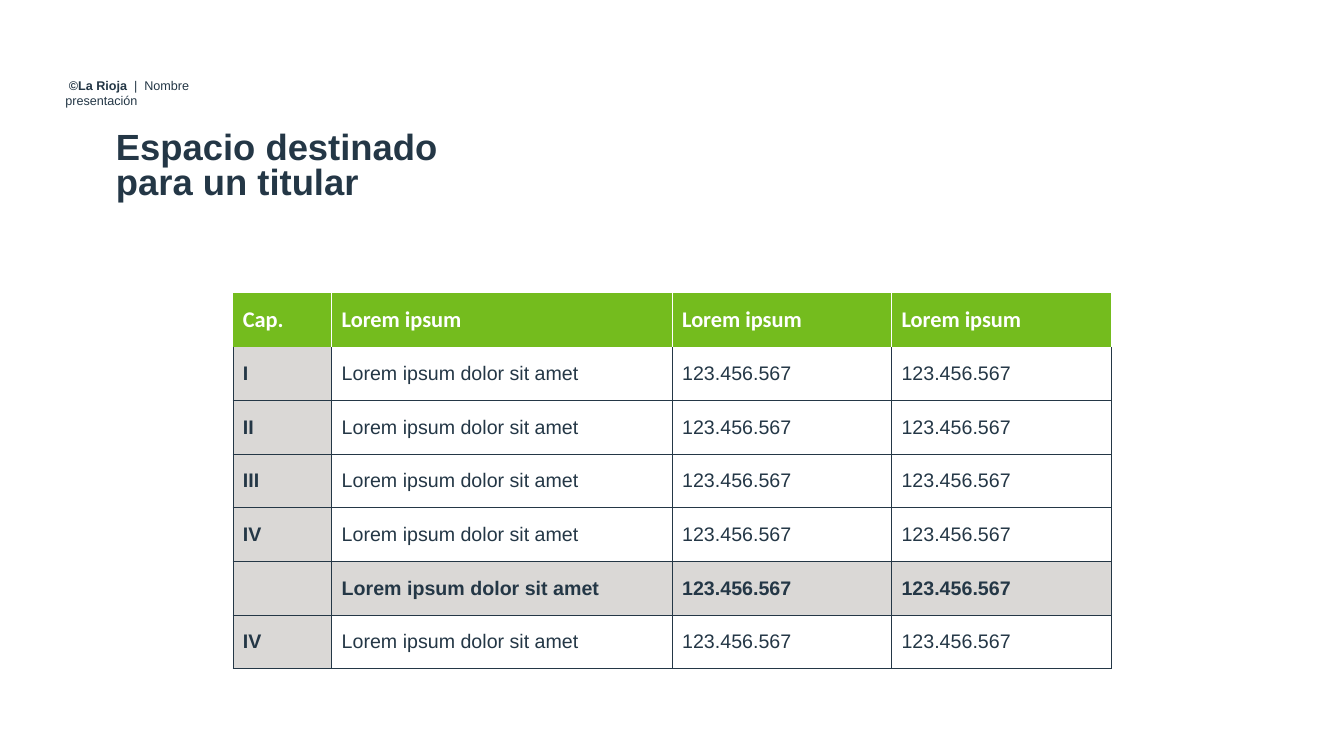
from lxml.etree import SubElement
from pptx import Presentation
from pptx.dml.color import RGBColor
from pptx.enum.text import MSO_ANCHOR, MSO_AUTO_SIZE, PP_ALIGN
from pptx.oxml.ns import qn
from pptx.util import Pt

COLORS = {"navy": "243746", "green": "74BC1E", "grey": "DAD8D6", "white": "FFFFFF"}
AMOUNT = "123.456.567"
ITEM = "Lorem ipsum dolor sit amet"
HEADINGS = ["Cap."] + ["Lorem ipsum"] * 3
CHAPTERS = ["I", "II", "III", "IV", "", "IV"]
TOTAL_ROW = 5
COLUMN_WIDTHS = [70.6, 243.2, 156.7, 156.7]
ROW_HEIGHT = 38.35


def rgb(name):
    return RGBColor.from_string(COLORS[name])


def style_run(r, size, bold=False, color="navy", name="Arial"):
    r.font.size = Pt(size)
    r.font.bold = bold
    r.font.name = name
    r.font.color.rgb = rgb(color)


def add_header(slide):
    box = slide.shapes.add_textbox(Pt(39.6), Pt(51.8), Pt(146.9), Pt(18))
    tf = box.text_frame
    tf.word_wrap = True
    p = tf.paragraphs[0]
    for text, bold in ((" ©La Rioja", True), ("  |  Nombre presentación", False)):
        r = p.add_run()
        r.text = text
        style_run(r, 9, bold)


def set_title(slide, text):
    title = slide.shapes.title
    title.left, title.top, title.width, title.height = Pt(75.6), Pt(91.4), Pt(263.5), Pt(57.6)
    tf = title.text_frame
    tf.text = text
    tf.word_wrap = True
    tf.auto_size = MSO_AUTO_SIZE.NONE
    tf.vertical_anchor = MSO_ANCHOR.TOP
    for p in tf.paragraphs:
        p.alignment = PP_ALIGN.LEFT
        p.line_spacing = Pt(25)
        p.space_before = Pt(0)
        style_run(p.runs[0], 26, True)


def set_borders(cell, **sides):
    """Draw the sides L, R, T and B in the named colour, or hide those given None."""
    tc_pr = cell._tc.get_or_add_tcPr()
    for side, color in sides.items():
        ln = SubElement(tc_pr, qn(f"a:ln{side}"), w=str(Pt(0.5)))
        if color:
            fill = SubElement(ln, qn("a:solidFill"))
            SubElement(fill, qn("a:srgbClr"), val=COLORS[color])
        else:
            SubElement(ln, qn("a:noFill"))


def fill_cell(cell, text, fill, **font):
    cell.fill.solid()
    cell.fill.fore_color.rgb = rgb(fill)
    cell.vertical_anchor = MSO_ANCHOR.MIDDLE
    cell.text = text
    for r in cell.text_frame.paragraphs[0].runs:
        style_run(r, **font)


def add_budget_table(slide):
    rows = [HEADINGS] + [[chapter, ITEM, AMOUNT, AMOUNT] for chapter in CHAPTERS]
    table = slide.shapes.add_table(
        len(rows), len(COLUMN_WIDTHS), Pt(166.3), Pt(209.4),
        Pt(sum(COLUMN_WIDTHS)), Pt(ROW_HEIGHT * len(rows))).table
    table.horz_banding = False
    for column, width in zip(table.columns, COLUMN_WIDTHS):
        column.width = Pt(width)
    last = len(COLUMN_WIDTHS) - 1
    for i, values in enumerate(rows):
        table.rows[i].height = Pt(ROW_HEIGHT)
        for j, text in enumerate(values):
            cell = table.cell(i, j)
            if i == 0:
                set_borders(cell, L="white" if j > 0 else None,
                            R="white" if j < last else None, T=None, B=None)
                fill_cell(cell, text, "green", size=16, bold=True,
                          color="white", name="Calibri")
            else:
                strong = j == 0 or i == TOTAL_ROW
                set_borders(cell, L="navy", R="navy",
                            T="navy" if i > 1 else None, B="navy")
                fill_cell(cell, text, "grey" if strong else "white",
                          size=14, bold=strong)


def main():
    prs = Presentation()
    prs.slide_width, prs.slide_height = Pt(960), Pt(540)
    slide = prs.slides.add_slide(prs.slide_layouts[5])
    add_header(slide)
    set_title(slide, "Espacio destinado\npara un titular")
    add_budget_table(slide)
    prs.save("out.pptx")


if __name__ == "__main__":
    main()
